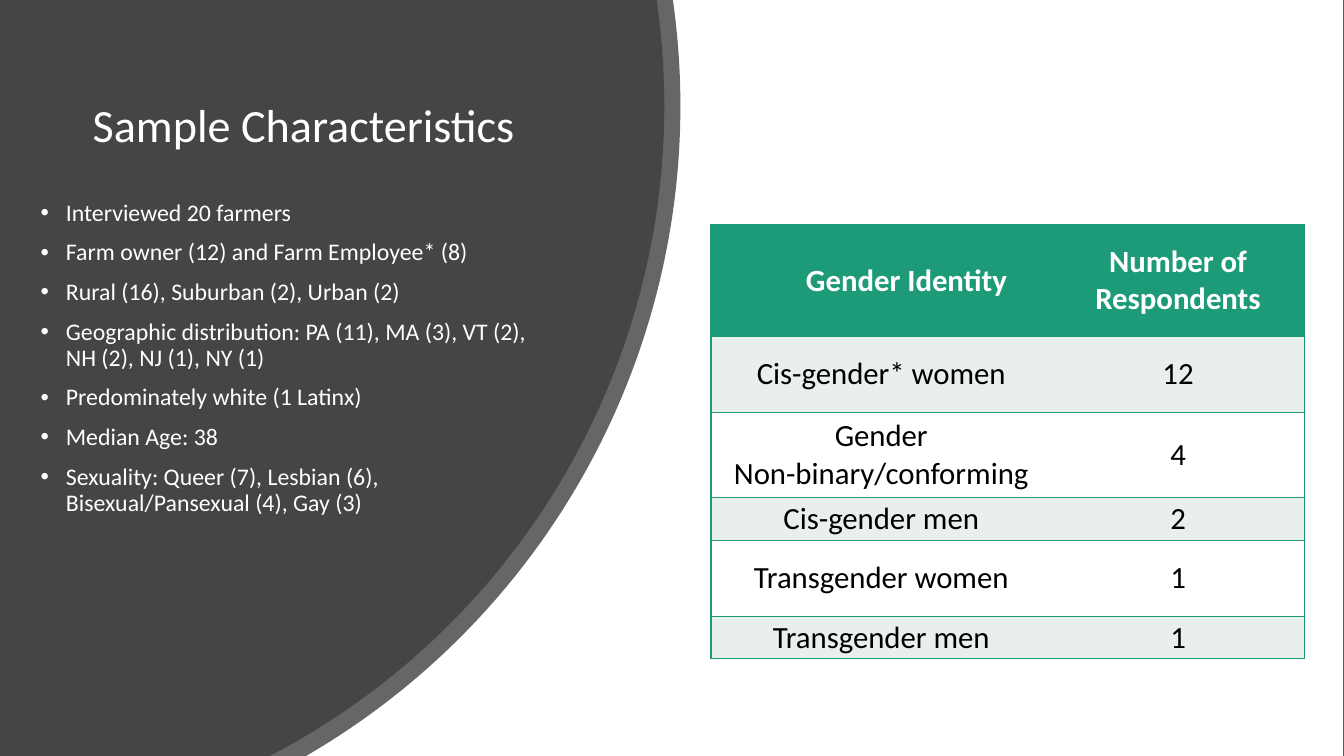
from dataclasses import dataclass
from math import asin, cos, sin, tan

from lxml.etree import SubElement
from pptx import Presentation
from pptx.dml.color import RGBColor as Color
from pptx.enum.shapes import MSO_SHAPE as Shape
from pptx.enum.text import MSO_ANCHOR as Anchor, MSO_AUTO_SIZE as AutoSize, PP_ALIGN as Align
from pptx.oxml.ns import qn
from pptx.util import Pt


@dataclass(frozen=True)
class Theme:
    font: str = "Calibri"
    dark: str = "454545"
    black: str = "000000"
    white: str = "FFFFFF"
    green: str = "1D9A78"
    pale: str = "E8EFEC"
    title_size: int = 33
    body_size: int = 17
    table_size: int = 22


THEME = Theme()
WIDTH, HEIGHT = 960, 540
ARC_CENTRE_Y = 75.6

BULLETS = [
    "Interviewed 20 farmers",
    "Farm owner (12) and Farm Employee* (8)",
    "Rural (16), Suburban (2), Urban (2)",
    "Geographic distribution: PA (11), MA (3), VT (2), NH (2), NJ (1), NY (1)",
    "Predominately white (1 Latinx)",
    "Median Age: 38",
    "Sexuality: Queer (7), Lesbian (6), Bisexual/Pansexual (4), Gay (3)",
]
RESPONDENTS = [
    ("Gender Identity", "Number of Respondents"),
    ("Cis-gender* women", "12"),
    ("Gender Non-binary/conforming", "4"),
    ("Cis-gender men", "2"),
    ("Transgender women", "1"),
    ("Transgender men", "1"),
]
COLUMN_SHARES = [0.574, 0.426]
ROW_HEIGHTS = [80, 54, 61, 30.5, 54, 30.5]


def add_run(paragraph, text, size, color, bold=False):
    run = paragraph.add_run()
    run.text = text
    run.font.name = THEME.font
    run.font.size = Pt(size)
    run.font.bold = bold
    run.font.color.rgb = Color.from_string(color)


def paint(shape, color):
    shape.shadow.inherit = False
    shape.fill.solid()
    shape.fill.fore_color.rgb = Color.from_string(color)
    shape.line.fill.background()


def add_backdrop(slide, left, top, width, height):
    slide.background.fill.solid()
    slide.background.fill.fore_color.rgb = Color.from_string(THEME.dark)
    page = slide.shapes.add_shape(Shape.RECTANGLE, Pt(left), Pt(top), Pt(width), Pt(height))
    paint(page, THEME.white)


def bend_segment(segment, centre, radius, start, end):
    reach = 4 / 3 * tan((end - start) / 4)
    handles = [
        (cos(start) - reach * sin(start), sin(start) + reach * cos(start)),
        (cos(end) + reach * sin(end), sin(end) - reach * cos(end)),
    ]
    segment.tag = qn("a:cubicBezTo")
    for index, (x, y) in enumerate(handles):
        handle = SubElement(segment, qn("a:pt"))
        handle.set("x", str(Pt(centre[0] + radius * x)))
        handle.set("y", str(Pt(centre[1] + radius * y)))
        segment.insert(index, handle)


def add_curved_panel(slide, left, top, width, height, radius, color, opacity=100):
    centre = (width - radius, ARC_CENTRE_Y)
    angles = [asin(-centre[1] / radius), 0, asin((height - centre[1]) / radius)]
    arc = [
        (Pt(left + centre[0] + radius * cos(angle)), Pt(top + centre[1] + radius * sin(angle)))
        for angle in angles
    ]
    builder = slide.shapes.build_freeform(Pt(left), Pt(top))
    builder.add_line_segments(arc + [(Pt(left), Pt(top + height))], close=True)
    panel = builder.convert_to_shape()
    segments = list(panel._element.iter(qn("a:lnTo")))
    for segment, start, end in zip(segments[1:], angles, angles[1:]):
        bend_segment(segment, centre, radius, start, end)
    paint(panel, color)
    if opacity < 100:
        fill_color = panel.fill._xPr.find(qn("a:solidFill"))[0]
        SubElement(fill_color, qn("a:alpha"), val=str(opacity * 1000))


def add_title(slide, left, top, width, height):
    title = slide.shapes.title
    title.left, title.top, title.width, title.height = Pt(left), Pt(top), Pt(width), Pt(height)
    frame = title.text_frame
    frame.auto_size = AutoSize.NONE
    frame.vertical_anchor = Anchor.MIDDLE
    paragraph = frame.paragraphs[0]
    paragraph.alignment = Align.LEFT
    paragraph.line_spacing = 0.9
    add_run(paragraph, "Sample Characteristics", THEME.title_size, THEME.white)


def add_bullets(slide, left, top, width, height):
    frame = slide.shapes.add_textbox(Pt(left), Pt(top), Pt(width), Pt(height)).text_frame
    frame.word_wrap = True
    for index, text in enumerate(BULLETS):
        paragraph = frame.add_paragraph() if index else frame.paragraphs[0]
        paragraph.line_spacing = 0.9
        paragraph.space_before = Pt(10)
        properties = paragraph._p.get_or_add_pPr()
        properties.set("marL", str(Pt(18)))
        properties.set("indent", str(Pt(-18)))
        SubElement(properties, qn("a:buFont"), typeface="Arial")
        SubElement(properties, qn("a:buChar"), char="•")
        add_run(paragraph, text, THEME.body_size, THEME.white)


def set_borders(cell, hidden_side):
    properties = cell._tc.get_or_add_tcPr()
    for index, side in enumerate(("lnL", "lnR", "lnT", "lnB")):
        line = SubElement(properties, qn(f"a:{side}"), w=str(Pt(1)))
        if side == hidden_side:
            SubElement(line, qn("a:noFill"))
        else:
            fill = SubElement(line, qn("a:solidFill"))
            SubElement(fill, qn("a:srgbClr"), val=THEME.green)
        properties.insert(index, line)


def fill_cell(cell, text, row, column):
    header = row == 0
    cell.fill.solid()
    background = THEME.green if header else THEME.pale if row % 2 else THEME.white
    cell.fill.fore_color.rgb = Color.from_string(background)
    cell.vertical_anchor = Anchor.MIDDLE
    cell.margin_left = cell.margin_right = Pt(5.4)
    cell.margin_top = cell.margin_bottom = 0
    paragraph = cell.text_frame.paragraphs[0]
    paragraph.alignment = Align.CENTER
    if header and column == 0:
        paragraph._p.get_or_add_pPr().set("marL", str(Pt(36)))
    add_run(paragraph, text, THEME.table_size, THEME.white if header else THEME.black, header)
    set_borders(cell, "lnL" if column else "lnR")


def add_respondent_table(slide, left, top, width, height):
    table = slide.shapes.add_table(
        len(RESPONDENTS), len(COLUMN_SHARES), Pt(left), Pt(top), Pt(width), Pt(height)
    ).table
    table.horz_banding = False
    for column, share in zip(table.columns, COLUMN_SHARES):
        column.width = Pt(width * share)
    for row, row_height in zip(table.rows, ROW_HEIGHTS):
        row.height = Pt(row_height * height / sum(ROW_HEIGHTS))
    for row, texts in enumerate(RESPONDENTS):
        for column, text in enumerate(texts):
            fill_cell(table.cell(row, column), text, row, column)


def build_sample_slide(presentation):
    slide = presentation.slides.add_slide(presentation.slide_layouts[5])
    add_backdrop(slide, 0, 0, WIDTH - 0.5, HEIGHT)
    add_curved_panel(slide, 0, 0, 486, HEIGHT, 537, THEME.black, 60)
    add_curved_panel(slide, 0, 0, 474.5, HEIGHT, 523.5, THEME.dark)
    add_title(slide, 59, 50.2, 320, 82)
    add_bullets(slide, 22, 139.8, 378.7, 286)
    add_respondent_table(slide, 507.8, 160.4, 424, 310.3)
    tree = slide.shapes._spTree
    title = slide.shapes.title._element
    tree.remove(title)
    tree.insert(5, title)


def main():
    presentation = Presentation()
    presentation.slide_width, presentation.slide_height = Pt(WIDTH), Pt(HEIGHT)
    build_sample_slide(presentation)
    presentation.save("out.pptx")


if __name__ == "__main__":
    main()
